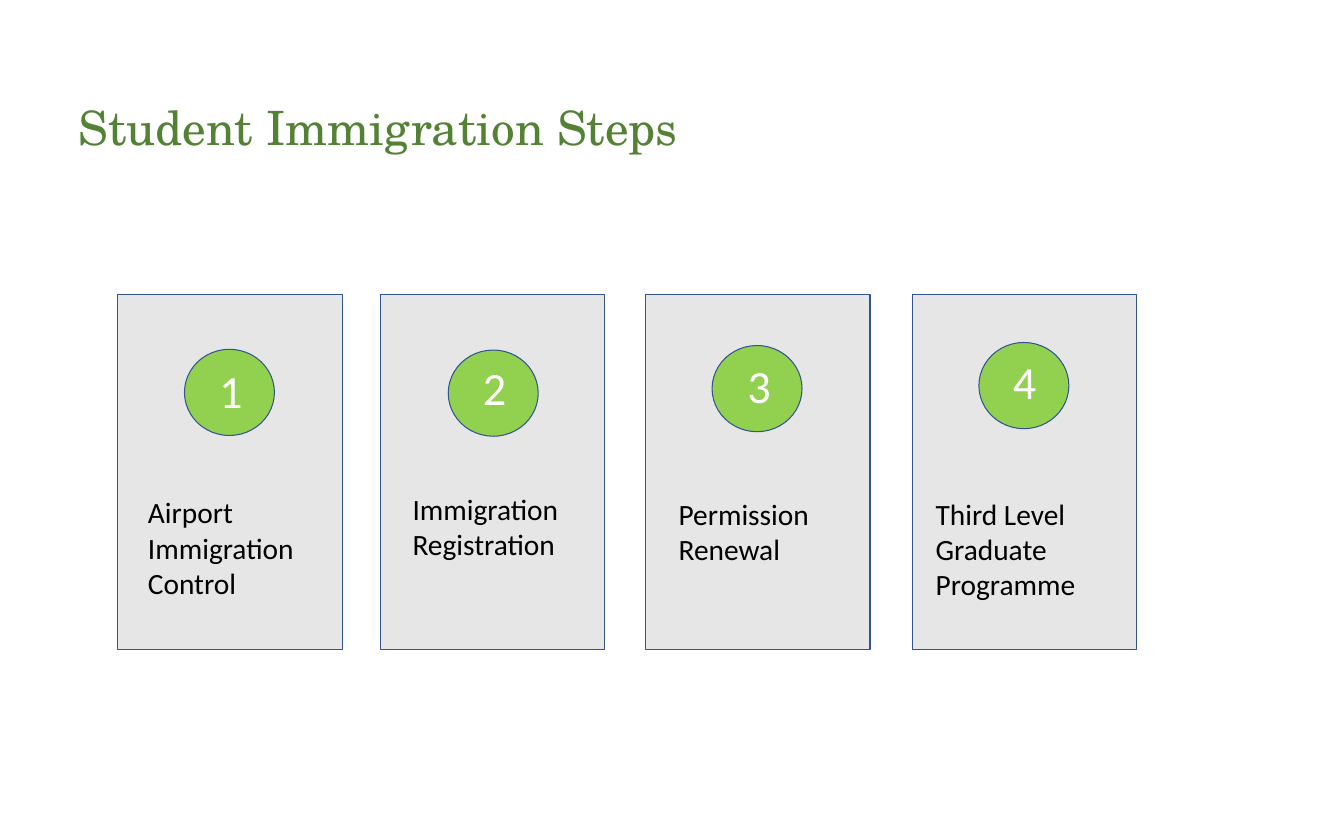
"""Build the Student Immigration Steps slide."""
from dataclasses import dataclass

import pptx
import pptx.dml.color
import pptx.enum.shapes
import pptx.enum.text
import pptx.util

Inches = pptx.util.Inches
RGBColor = pptx.dml.color.RGBColor
MSO_SHAPE = pptx.enum.shapes.MSO_SHAPE
MSO_AUTO_SIZE = pptx.enum.text.MSO_AUTO_SIZE

TITLE_GREEN = RGBColor(0x54, 0x82, 0x35)
BADGE_GREEN = RGBColor(0x92, 0xD0, 0x50)
CARD_GREY = RGBColor(0xE7, 0xE6, 0xE6)
OUTLINE_BLUE = RGBColor(0x32, 0x54, 0x91)
BLACK = RGBColor(0x00, 0x00, 0x00)
WHITE = RGBColor(0xFF, 0xFF, 0xFF)

CARD_TOP, CARD_WIDTH, CARD_HEIGHT = 3.89, 2.97, 4.7
BADGE_WIDTH, BADGE_HEIGHT = 1.19, 1.14
NUMBER_HEIGHT = 0.84


@dataclass
class Step:
    """One step card: its label and the places of its parts in inches."""
    label: str
    left: float
    badge: tuple
    number_box: tuple
    label_box: tuple


STEPS = [
    Step("Airport Immigration Control", 1.56, (2.44, 4.62),
         (2.8, 4.74, 0.6), (1.86, 6.49, 2.36, 1.51)),
    Step("Immigration Registration", 5.03, (5.93, 4.63),
         (6.29, 4.71, 0.6), (5.36, 6.44, 2.34, 1.04)),
    Step("Permission Renewal", 8.54, (9.42, 4.57),
         (9.79, 4.68, 0.49), (8.88, 6.51, 2.46, 1.04)),
    Step("Third Level Graduate Programme", 12.07, (12.95, 4.53),
         (13.3, 4.63, 0.7), (12.28, 6.51, 2.45, 1.51)),
]


def add_outlined_shape(shapes, kind, box, fill):
    """Add a filled preset shape with the blue outline."""
    shape = shapes.add_shape(kind, *map(Inches, box))
    shape.shadow.inherit = False
    shape.fill.solid()
    shape.fill.fore_color.rgb = fill
    shape.line.color.rgb = OUTLINE_BLUE
    shape.line.width = pptx.util.Pt(1)


def add_text(shapes, text, box, size, color, font="Calibri"):
    """Add a wrapping text box and return it."""
    text_box = shapes.add_textbox(*map(Inches, box))
    frame = text_box.text_frame
    frame.word_wrap = True
    frame.auto_size = MSO_AUTO_SIZE.SHAPE_TO_FIT_TEXT
    frame.text = text
    run_font = frame.paragraphs[0].runs[0].font
    run_font.name = font
    run_font.size = pptx.util.Pt(size)
    run_font.color.rgb = color
    return text_box


def add_title(slide):
    """Add the slide title."""
    title = add_text(slide.shapes, "Student Immigration Steps",
                     (0.94, 1.34, 15.33, 1.89), 45, TITLE_GREEN, "TeX Gyre Schola")
    title.text_frame.auto_size = MSO_AUTO_SIZE.NONE
    title.text_frame.paragraphs[0].line_spacing = 0.9


def add_step(slide, number, step):
    """Add one step as a group of card, label, badge and number."""
    shapes = slide.shapes.add_group_shape().shapes
    add_outlined_shape(shapes, MSO_SHAPE.RECTANGLE,
                       (step.left, CARD_TOP, CARD_WIDTH, CARD_HEIGHT), CARD_GREY)
    add_text(shapes, step.label, step.label_box, 28, BLACK)
    add_outlined_shape(shapes, MSO_SHAPE.OVAL,
                       (*step.badge, BADGE_WIDTH, BADGE_HEIGHT), BADGE_GREEN)
    add_text(shapes, str(number), (*step.number_box, NUMBER_HEIGHT), 44, WHITE)


def main():
    """Create the presentation and save it."""
    presentation = pptx.Presentation()
    presentation.slide_width = Inches(17.78)
    presentation.slide_height = Inches(11.11)
    slide = presentation.slides.add_slide(presentation.slide_layouts[6])
    add_title(slide)
    for number, step in enumerate(STEPS, start=1):
        add_step(slide, number, step)
    presentation.save("out.pptx")


if __name__ == "__main__":
    main()
